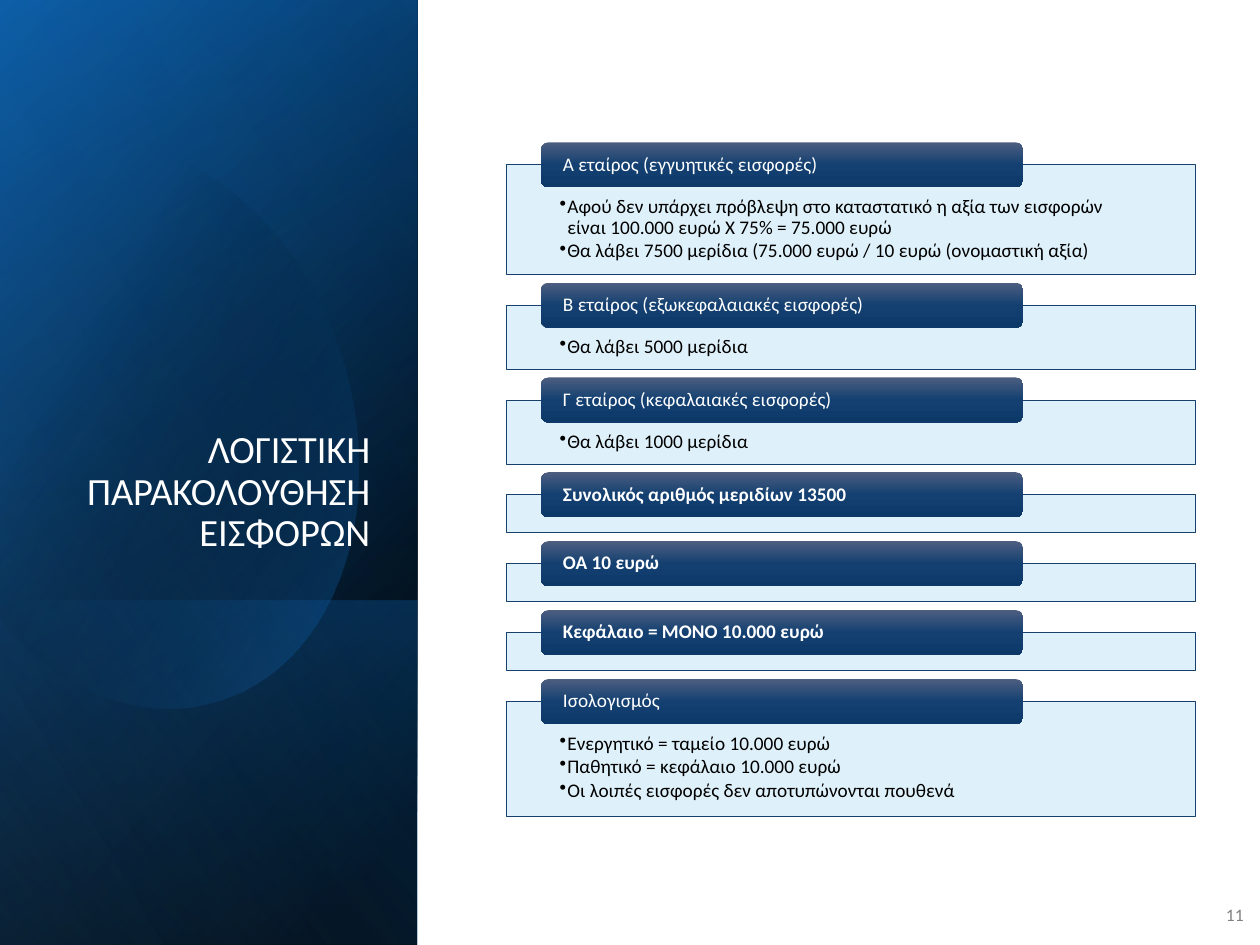
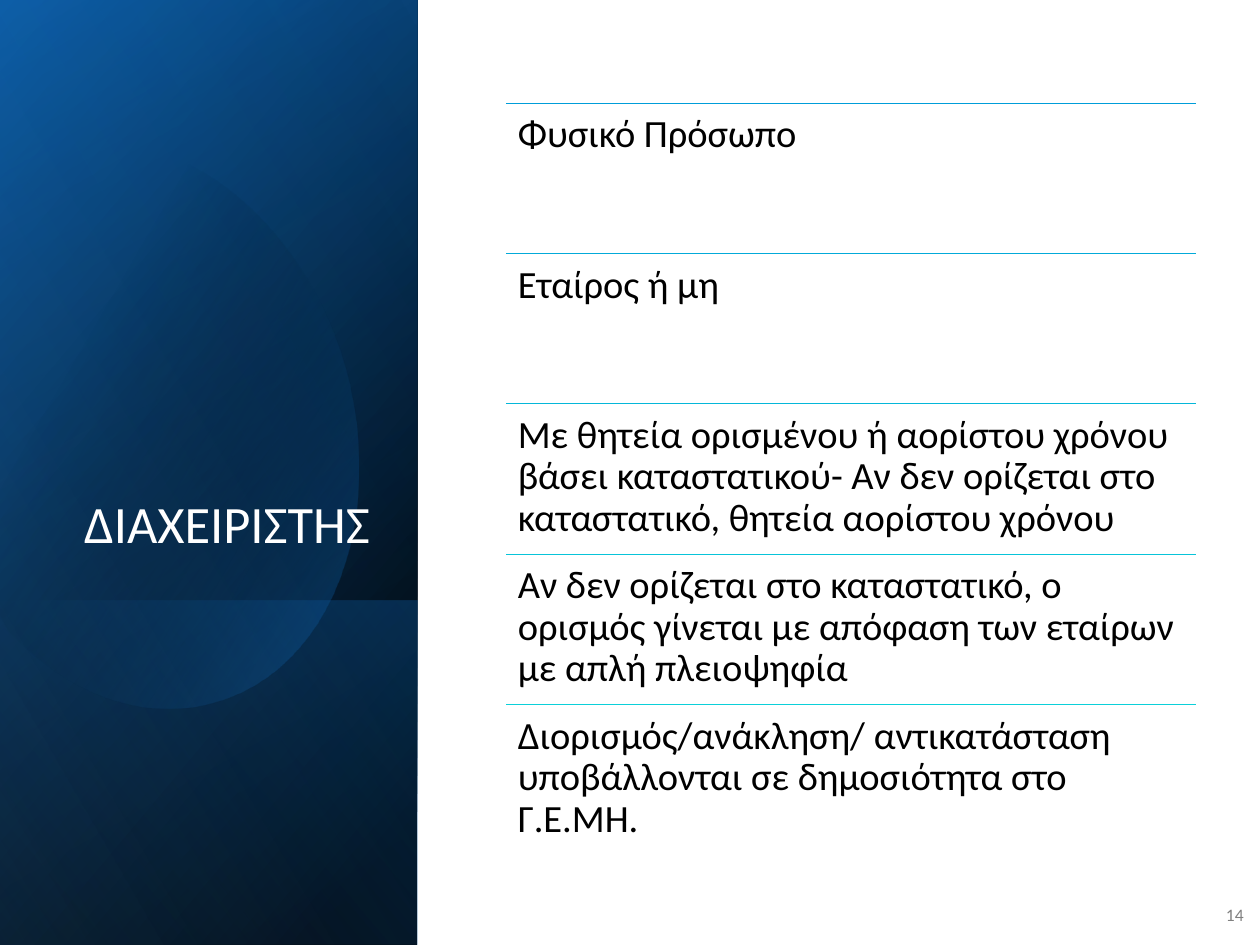
from dataclasses import dataclass

from lxml import etree
from pptx import Presentation
from pptx import util as u
from pptx.dml.color import RGBColor
from pptx.enum import shapes, text
from pptx.oxml.ns import qn

Cm, Pt = u.Cm, u.Pt
TOP, MIDDLE, BOTTOM = (text.MSO_ANCHOR.TOP, text.MSO_ANCHOR.MIDDLE,
                       text.MSO_ANCHOR.BOTTOM)
LEFT, RIGHT = text.PP_ALIGN.LEFT, text.PP_ALIGN.RIGHT


@dataclass(frozen=True)
class Theme:
    font: str = "Calibri"
    light: str = "FFFFFF"
    ink: str = "000000"
    muted: str = "808080"
    card_fill: str = "DBEFF9"
    card_line: str = "17406D"
    # Gradient stops are (position %, colour, opacity %)
    header: tuple = ((0, "4D5E80", 100), (50, "134071", 100), (100, "0D3969", 100))
    panel_base: tuple = ((8, "000000", 100), (100, "0B5394", 100))
    panel_glow: tuple = ((0, "000000", 0), (99, "0F6FC6", 46))
    panel_foot: tuple = ((2, "0F6FC6", 29), (100, "000000", 30))
    panel_oval: tuple = ((29, "000000", 0), (100, "0F6FC6", 43))
    panel_sheen: tuple = ((0, "000000", 0), (99, "59AAF2", 11))
    rules: tuple = ("009DD9", "03AAD9", "05B7D9", "08C4D9", "0BD0D9")
    long_title_size: int = 22
    title_size: int = 30
    row_size: int = 22
    card_size: int = 11
    number_size: int = 10


THEME = Theme()

PANEL = (0, 0, 8.41, 19.05)
CARDS = (10.21, 2.87, 13.89)
ROWS = (10.21, 2.08, 13.89, 15.15)

# Oval outline in inches: start, then curves (three points) and lines (one point)
OVAL_START = (0.96, 1.14)
OVAL_SEGMENTS = [
    [(1.71, 1.22), (2.44, 1.92), (2.73, 2.9)],
    [(3.07, 4.12), (2.62, 5.31), (1.71, 5.57)],
    [(1.14, 5.74), (0.53, 5.5), (0.07, 5)],
    [(-0.03, 4.88)],
    [(-0.25, 1.66)],
    [(-0.15, 1.54)],
    [(0.02, 1.37), (0.22, 1.25), (0.45, 1.18)],
    [(0.62, 1.13), (0.79, 1.12), (0.96, 1.14)],
]

PARTNER_CARDS = [
    # header, bold, height of the box, points
    ("Α εταίρος (εγγυητικές εισφορές)", False, 2.21, [
        "Αφού δεν υπάρχει πρόβλεψη στο καταστατικό η αξία των εισφορών "
        "είναι 100.000 ευρώ Χ 75% = 75.000 ευρώ",
        "Θα λάβει 7500 μερίδια (75.000 ευρώ / 10 ευρώ (ονομαστική αξία)"]),
    ("Β εταίρος (εξωκεφαλαιακές εισφορές)", False, 1.29, ["Θα λάβει 5000 μερίδια"]),
    ("Γ εταίρος (κεφαλαιακές εισφορές)", False, 1.29, ["Θα λάβει 1000 μερίδια"]),
    ("Συνολικός αριθμός μεριδίων 13500", True, 0.77, []),
    ("ΟΑ 10 ευρώ", True, 0.77, []),
    ("Κεφάλαιο = ΜΟΝΟ 10.000 ευρώ", True, 0.77, []),
    ("Ισολογισμός", False, 2.31, [
        "Ενεργητικό = ταμείο 10.000 ευρώ",
        "Παθητικό = κεφάλαιο 10.000 ευρώ",
        "Οι λοιπές εισφορές δεν αποτυπώνονται πουθενά"]),
]

MANAGER_ROWS = [
    "Φυσικό Πρόσωπο",
    "Εταίρος ή μη",
    "Με θητεία ορισμένου ή αορίστου χρόνου βάσει καταστατικού- "
    "Αν δεν ορίζεται στο καταστατικό, θητεία αορίστου χρόνου",
    "Αν δεν ορίζεται στο καταστατικό, ο ορισμός γίνεται με απόφαση "
    "των εταίρων με απλή πλειοψηφία",
    "Διορισμός/ανάκληση/ αντικατάσταση υποβάλλονται σε δημοσιότητα στο Γ.Ε.ΜΗ.",
]


def cm_box(*lengths):
    return [Cm(length) for length in lengths]


def set_opacity(colour, percent):
    etree.SubElement(colour, qn("a:alpha")).set("val", str(percent * 1000))


def fill_gradient(shape, stops, angle):
    """Fill with stops along a clockwise angle, and drop outline and shadow."""
    shape.shadow.inherit = False
    shape.line.fill.background()
    shape.fill.gradient()
    gradient = shape.element.spPr.find(qn("a:gradFill"))
    stop_list = gradient.find(qn("a:gsLst"))
    for sample in list(stop_list):
        stop_list.remove(sample)
    for position, rgb, opacity in stops:
        stop = etree.SubElement(stop_list, qn("a:gs"))
        stop.set("pos", str(position * 1000))
        colour = etree.SubElement(stop, qn("a:srgbClr"))
        colour.set("val", rgb)
        if opacity < 100:
            set_opacity(colour, opacity)
    gradient.find(qn("a:lin")).set("ang", str(angle * 60000))


def add_bullet(paragraph, indent):
    properties = paragraph._p.get_or_add_pPr()
    properties.set("marL", str(Cm(indent)))
    properties.set("indent", str(-Cm(indent)))
    etree.SubElement(properties, qn("a:buChar")).set("char", "•")


def write(shape, lines, size, rgb, anchor=TOP, align=LEFT, insets=None,
          bold=False, bullets=False, spacing=0.9, after=0):
    frame = shape.text_frame
    frame.word_wrap = True
    frame.auto_size = text.MSO_AUTO_SIZE.NONE
    frame.vertical_anchor = anchor
    if insets:
        (frame.margin_left, frame.margin_top,
         frame.margin_right, frame.margin_bottom) = cm_box(*insets)
    for index, line in enumerate(lines):
        paragraph = frame.add_paragraph() if index else frame.paragraphs[0]
        paragraph.text = line
        paragraph.alignment = align
        paragraph.line_spacing = spacing
        paragraph.space_after = Pt(after)
        if bullets:
            add_bullet(paragraph, 0.16)
        font = paragraph.font
        font.name, font.size, font.bold = THEME.font, Pt(size), bold
        font.color.rgb = RGBColor.from_string(rgb)


def add_turned_band(slide, box, stops, angle):
    """Cover the box with a rectangle that is mirrored and turned by 90 degrees."""
    x, y, width, height = box
    band = slide.shapes.add_shape(
        shapes.MSO_SHAPE.RECTANGLE,
        *cm_box(x + (width - height) / 2, y + (height - width) / 2, height, width))
    band.rotation = 90
    band.element.spPr.find(qn("a:xfrm")).set("flipH", "1")
    fill_gradient(band, stops, angle)


def curve_points(start, a, b, end, steps=24):
    for step in range(1, steps + 1):
        t = step / steps
        s = 1 - t
        yield tuple(s**3 * p + 3 * s * s * t * q + 3 * s * t * t * r + t**3 * e
                    for p, q, r, e in zip(start, a, b, end))


def add_oval(slide, left):
    """Draw the large oval, cut off at the left edge of the panel."""
    points = [OVAL_START]
    for segment in OVAL_SEGMENTS:
        points += curve_points(points[-1], *segment) if len(segment) == 3 else segment
    points = [(Cm(left + max(x, 0) * 2.54), Cm(y * 2.54)) for x, y in points]
    outline = slide.shapes.build_freeform(*points[0])
    outline.add_line_segments(points[1:], close=True)
    fill_gradient(outline.convert_to_shape(), THEME.panel_oval, 30)


def add_side_panel(slide, box, title, title_size):
    x, y, width, height = box
    foot_height = 6.95
    add_turned_band(slide, box, THEME.panel_base, 50)
    add_turned_band(slide, box, THEME.panel_glow, 30)
    add_turned_band(slide, (x, y + height - foot_height, width, foot_height),
                    THEME.panel_foot, 130)
    add_oval(slide, x)
    add_turned_band(slide, box, THEME.panel_sheen, 120)

    heading = slide.shapes.title
    slide.shapes.element.append(heading.element)  # in front of the bands
    heading.left, heading.top, heading.width, heading.height = cm_box(
        x + 1.22, y + 4.67, 6.5, 6.65)
    write(heading, [title], title_size, THEME.light, BOTTOM, RIGHT)


def add_page_number(slide, number):
    corner = slide.shapes.add_textbox(*cm_box(24.38, 17.93, 0.94, 1.02))
    write(corner, [str(number)], THEME.number_size, THEME.muted, MIDDLE, RIGHT,
          spacing=1.0, after=6)


def add_card(slide, box, header, bold, points):
    """Place a pale box whose header tab straddles its top edge."""
    x, y, width, height = box
    tab_height = 0.91
    body = slide.shapes.add_shape(
        shapes.MSO_SHAPE.RECTANGLE,
        *cm_box(x, y + tab_height / 2, width, height))
    body.shadow.inherit = False
    body.fill.solid()
    body.fill.fore_color.rgb = RGBColor.from_string(THEME.card_fill)
    set_opacity(body.element.spPr.find(qn("a:solidFill"))[0], 90)
    body.line.color.rgb = RGBColor.from_string(THEME.card_line)
    body.line.width = Pt(0.5)
    write(body, points, THEME.card_size, THEME.ink,
          insets=(1.07, 0.64, 1.07, 0.23), bullets=True, after=1.7)

    tab = slide.shapes.add_shape(
        shapes.MSO_SHAPE.ROUNDED_RECTANGLE,
        *cm_box(x + width * 0.05, y, width * 0.7, tab_height))
    fill_gradient(tab, THEME.header, 90)
    write(tab, [header], THEME.card_size, THEME.light, MIDDLE,
          insets=(0.4, 0, 0.4, 0), bold=bold)


def add_cards(slide, box, cards):
    x, y, width = box
    gap = 0.62
    for header, bold, height, points in cards:
        add_card(slide, (x, y, width, height), header, bold, points)
        y += height + gap


def add_ruled_rows(slide, box, rows):
    x, y, width, height = box
    pitch = height / len(rows)
    for index, (row, rgb) in enumerate(zip(rows, THEME.rules)):
        top = y + index * pitch
        rule = slide.shapes.add_connector(
            shapes.MSO_CONNECTOR.STRAIGHT, *cm_box(x, top, x + width, top))
        rule.line.color.rgb = RGBColor.from_string(rgb)
        rule.line.width = Pt(0.5)
        etree.SubElement(rule.element.spPr, qn("a:effectLst"))
        entry = slide.shapes.add_textbox(*cm_box(x, top, width, pitch))
        write(entry, [row], THEME.row_size, THEME.ink, insets=(0.23,) * 4)


def add_panel_slide(deck, title, title_size, number):
    slide = deck.slides.add_slide(deck.slide_layouts[5])
    add_side_panel(slide, PANEL, title, title_size)
    add_page_number(slide, number)
    return slide


def main():
    deck = Presentation()
    deck.slide_width, deck.slide_height = cm_box(25.4, 19.05)

    contributions = add_panel_slide(
        deck, "ΛΟΓΙΣΤΙΚΗ ΠΑΡΑΚΟΛΟΥΘΗΣΗ ΕΙΣΦΟΡΩΝ", THEME.long_title_size, 11)
    add_cards(contributions, CARDS, PARTNER_CARDS)

    manager = add_panel_slide(deck, "ΔΙΑΧΕΙΡΙΣΤΗΣ", THEME.title_size, 14)
    add_ruled_rows(manager, ROWS, MANAGER_ROWS)

    deck.save("out.pptx")


if __name__ == "__main__":
    main()
